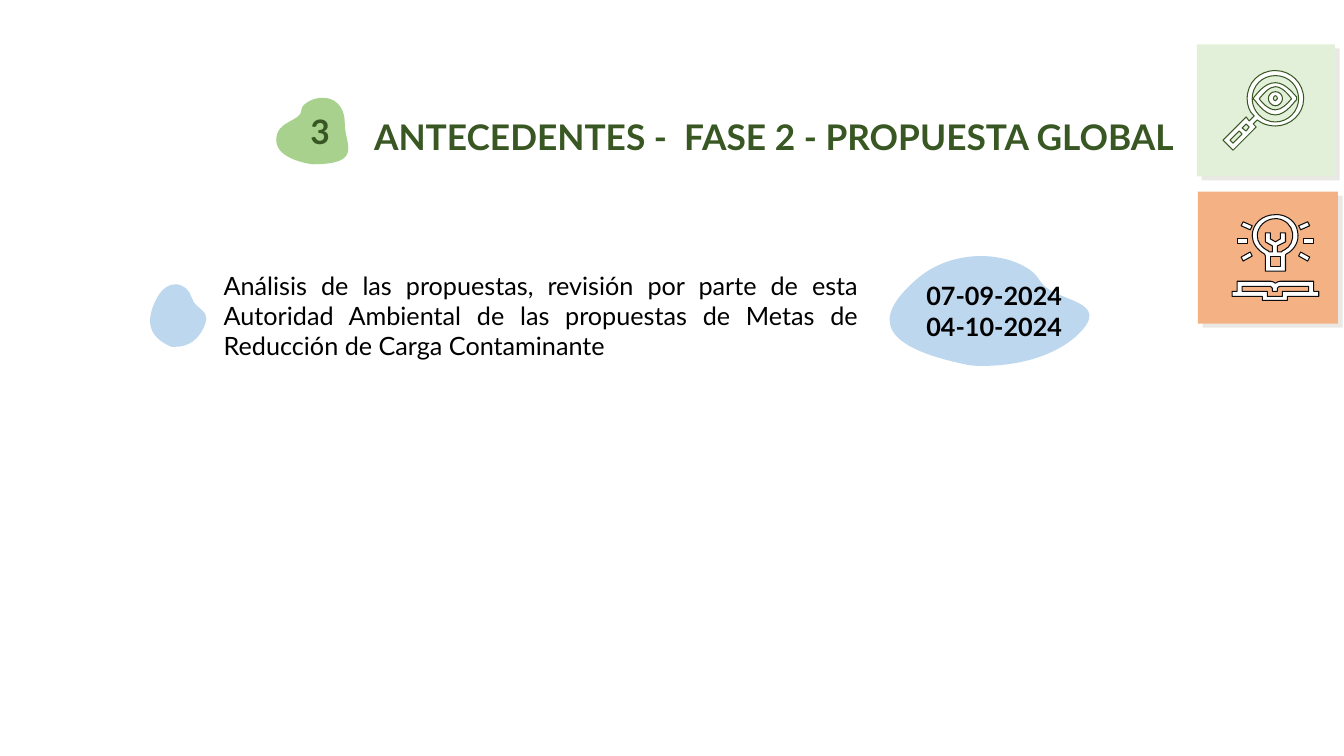
from lxml import etree
from pptx import Presentation
from pptx.dml.color import RGBColor
from pptx.enum.shapes import MSO_SHAPE
from pptx.enum.text import MSO_ANCHOR, MSO_AUTO_SIZE, PP_ALIGN
from pptx.oxml.ns import qn
from pptx.util import Inches, Pt

RECTANGLE = MSO_SHAPE.RECTANGLE
MIDDLE, TOP = MSO_ANCHOR.MIDDLE, MSO_ANCHOR.TOP
LEFT, CENTER, JUSTIFY = PP_ALIGN.LEFT, PP_ALIGN.CENTER, PP_ALIGN.JUSTIFY
NO_AUTOFIT = MSO_AUTO_SIZE.NONE
DARK_GREEN, GREEN, PALE_GREEN = "385723", "A9D18E", "E2F0D9"
BLUE, ORANGE, WHITE, BLACK, NEAR_BLACK = "BDD7EE", "F4B183", "FFFFFF", "000000", "0D0D0D"


def write_text(shape, text, size=18, color=BLACK, bold=False, align=CENTER,
               anchor=MIDDLE, spacing=1.0, margin=0.1):
    frame = shape.text_frame
    frame.word_wrap = True
    frame.auto_size = NO_AUTOFIT
    frame.vertical_anchor = anchor
    frame.margin_left = frame.margin_right = Inches(0.1)
    frame.margin_top = frame.margin_bottom = Inches(margin)
    frame.text = text
    for paragraph in frame.paragraphs:
        paragraph.alignment = align
        paragraph.line_spacing = spacing
        paragraph.font.name = "Lato"
        paragraph.font.size = Pt(size)
        paragraph.font.bold = bold
        paragraph.font.color.rgb = RGBColor.from_string(color)


def draw_outline(shapes, outline, fill, line=None):
    builder, curves = None, []
    for contour in outline.split("Z"):
        commands = []
        for token in contour.split():
            if token.isalpha():
                commands.append((token, []))
            else:
                x, y = token.split(",")
                commands[-1][1].append((int(x), int(y)))
        start = commands[0][1][0]
        if builder is None:
            builder = shapes.build_freeform(*start, scale=Inches(0.01))
        else:
            builder.move_to(*start)
        builder.add_line_segments([point for _, points in commands[1:] for point in points])
        for kind, points in commands[1:]:
            curves += [kind == "C"] * (len(points) // 3 if kind == "C" else len(points))
    shape = builder.convert_to_shape()
    segments = iter(list(shape._element.iter(qn("a:lnTo"))))
    for curved in curves:
        segment = next(segments)
        if curved:
            segment.tag = qn("a:cubicBezTo")
            for _ in range(2):
                control = next(segments)
                segment.append(control[0])
                control.getparent().remove(control)
    shape.shadow.inherit = False
    shape.fill.solid()
    shape.fill.fore_color.rgb = RGBColor.from_string(fill)
    if line:
        shape.line.color.rgb = RGBColor.from_string(line)
        shape.line.width = Pt(0.75)
    else:
        shape.line.fill.background()
    return shape


number_blob = ("M 320,97 C 309,97 299,104 299,109 299,121 274,119 274,139 "
               "274,159 310,163 310,163 361,163 342,143 342,123 342,104 331,97 320,97")
bullet_blob = ("M 174,282 C 182,282 188,288 190,295 194,309 212,306 201,327 193,342 181,344 174,344 "
               "172,344 170,344 170,344 146,334 144,317 156,295 161,286 168,282 174,282")
date_blob = ("M 973,254 C 1000,254 1024,265 1031,278 1044,301 1107,296 1068,333 1039,359 996,363 974,363 "
             "965,363 960,362 960,362 872,344 865,316 908,278 927,261 951,254 973,254")

magnifier = [
    "M 1265,75 C 1278,75 1288,85 1288,98 1288,110 1278,121 1265,121 1252,121 1242,110 1242,98 "
    "1242,85 1252,75 1265,75 Z M 1236,123 L 1239,126 1236,130 1232,127 1236,123 Z "
    "M 1229,130 L 1232,133 1223,142 1220,139 1229,130 Z "
    "M 1265,70 C 1249,70 1237,82 1237,98 1237,104 1239,111 1244,115 "
    "L 1239,120 1236,116 1213,139 1223,149 1246,126 1243,123 1247,119 "
    "C 1252,123 1258,125 1265,125 1280,125 1293,113 1293,98 1293,82 1280,70 1265,70",
    "M 1265,95 C 1266,95 1267,96 1267,98 1267,99 1266,100 1265,100 1264,100 1263,99 1263,98 "
    "1263,96 1264,95 1265,95 Z M 1265,91 C 1261,91 1258,94 1258,98 1258,101 1261,105 1265,105 "
    "1269,105 1272,101 1272,98 1272,94 1269,91 1265,91",
    "M 1265,86 C 1272,86 1279,95 1281,98 1277,103 1271,109 1265,109 1258,109 1251,101 1249,98 "
    "1253,93 1259,86 1265,86 Z M 1265,82 C 1253,82 1245,96 1244,96 L 1243,98 1244,99 "
    "C 1245,99 1253,114 1265,114 1276,114 1285,99 1286,99 L 1286,98 1286,96 "
    "C 1285,96 1276,82 1265,82",
]
bulb_and_book = [
    "M 1298,284 L 1298,289 1272,289 1272,294 1257,294 1257,289 1232,289 1232,284 1260,284 "
    "C 1261,284 1262,285 1262,286 L 1262,289 1267,289 1267,286 C 1267,285 1269,284 1270,284 Z "
    "M 1227,279 L 1227,289 1222,289 1222,294 1252,294 1252,298 1277,298 1277,294 1308,294 "
    "1308,289 1303,289 1303,279 1270,279 C 1268,279 1266,280 1265,281 1264,280 1262,279 1260,279",
    "M 1265,217 C 1266,217 1266,217 1267,217 1275,218 1281,224 1282,231 1283,238 1280,245 1274,248 "
    "1273,248 1272,249 1271,250 L 1267,250 1267,244 1275,240 1275,231 1270,231 1270,237 1265,240 "
    "1260,237 1260,231 1255,231 1255,240 1262,244 1262,250 1259,250 "
    "C 1258,249 1257,248 1256,248 1251,245 1247,240 1247,234 1247,225 1255,217 1265,217 Z "
    "M 1270,255 L 1270,264 1260,264 1260,255 Z "
    "M 1265,213 C 1252,213 1242,222 1242,234 1242,241 1247,248 1254,252 1254,252 1255,253 1255,254 "
    "L 1255,269 1275,269 1275,254 C 1275,253 1275,252 1276,252 1284,248 1289,239 1287,230 "
    "1286,221 1278,214 1268,213 1267,213 1266,213 1265,213",
]
left_rays = [
    [(1240, 250), (1231, 255), (1233, 259), (1242, 254)],
    [(1233, 220), (1231, 224), (1240, 228), (1242, 224)],
    [(1227, 237), (1227, 242), (1237, 242), (1237, 237)],
]
bulb_axis = 1265
for ray in left_rays:
    mirrored_ray = [(2 * bulb_axis - x, y) for x, y in ray]
    for points in (ray, mirrored_ray):
        corners = [f"{x},{y}" for x, y in points]
        bulb_and_book.append(f"M {corners[0]} L " + " ".join(corners[1:]))

presentation = Presentation()
presentation.slide_width = Inches(13.33)
presentation.slide_height = Inches(7.5)
slide = presentation.slides.add_slide(presentation.slide_layouts[5])

number = draw_outline(slide.shapes, number_blob, GREEN)
write_text(number, "3", size=24, color=DARK_GREEN, bold=True)

title = slide.shapes.title
title.left, title.top = Inches(3.61), Inches(1)
title.width, title.height = Inches(8.52), Inches(0.75)
write_text(title, "ANTECEDENTES -  FASE 2 - PROPUESTA GLOBAL", size=25.2, color=DARK_GREEN,
           bold=True, align=LEFT, spacing=0.9, margin=0.05)

draw_outline(slide.shapes, bullet_blob, BLUE)

tiles = [
    (11.87, 0.44, 1.37, PALE_GREEN, magnifier, DARK_GREEN),
    (11.88, 1.9, 1.39, ORANGE, bulb_and_book, NEAR_BLACK),
]
for left, top, width, fill, icon, line in tiles:
    tile = slide.shapes.add_shape(RECTANGLE, Inches(left), Inches(top), Inches(width), Inches(1.31))
    tile.fill.solid()
    tile.fill.fore_color.rgb = RGBColor.from_string(fill)
    tile.line.fill.background()
    tile.shadow.inherit = False
    effects = tile._element.spPr.find(qn("a:effectLst"))
    shadow = etree.SubElement(effects, qn("a:outerShdw"), dist=str(Pt(4.5)), dir="2400000",
                              algn="tl", rotWithShape="0")
    shadow_color = etree.SubElement(shadow, qn("a:srgbClr"), val="918C7F")
    etree.SubElement(shadow_color, qn("a:alpha"), val="20000")
    group = slide.shapes.add_group_shape()
    for outline in icon:
        draw_outline(group.shapes, outline, WHITE, line)

description = slide.shapes.add_textbox(Inches(2.12), Inches(2.63), Inches(6.49), Inches(1.01))
write_text(description, "Análisis de las propuestas, revisión por parte de esta Autoridad Ambiental "
           "de las propuestas de Metas de Reducción de Carga Contaminante",
           align=JUSTIFY, anchor=TOP, margin=0.05)

dates = draw_outline(slide.shapes, date_blob, BLUE)
write_text(dates, "07-09-2024\n04-10-2024", bold=True)

presentation.save("out.pptx")
